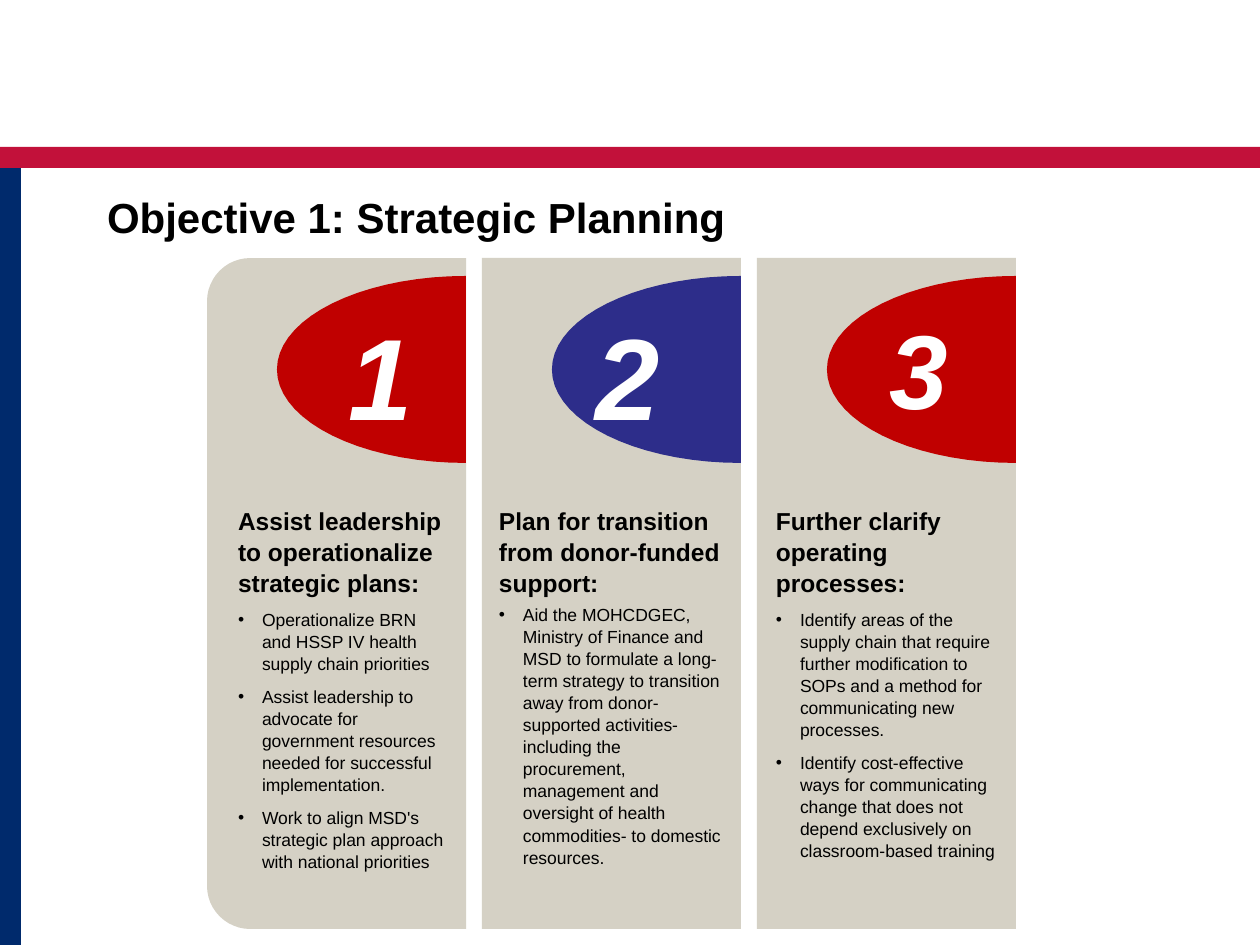
from math import cos, pi, sin

from lxml.etree import SubElement
from pptx import Presentation
from pptx.dml.color import RGBColor
from pptx.enum.shapes import MSO_SHAPE
from pptx.oxml.ns import qn
from pptx.util import Pt

PX = 914400 // 126
FONT = "Arial"
RED, NAVY, BLUE, CRIMSON = "C00000", "002A6C", "2D2D8A", "C2113A"
STONE, BLACK, WHITE = "D5D1C5", "000000", "FFFFFF"

# Content
TITLE = "Objective 1: Strategic Planning"
COLUMNS = [
    dict(number="1", size=66, color=RED, number_box=(349, 298, 107, 129),
         text_box=(238, 505, 208, 353), bullet_gap=3,
         heading="Assist leadership to operationalize strategic plans:",
         bullets=["Operationalize BRN and HSSP IV health supply chain priorities",
                  "Assist leadership to advocate for government resources needed "
                  "for successful implementation.",
                  "Work to align MSD's strategic plan approach with national priorities"]),
    dict(number="2", size=66, color=BLUE, number_box=(596, 298, 136, 129),
         text_box=(499, 505, 228, 353), bullet_gap=0,
         heading="Plan for transition from donor-funded support:",
         bullets=["Aid the MOHCDGEC, Ministry of Finance and MSD to formulate a "
                  "long-term strategy to transition away from donor-supported "
                  "activities- including the procurement, management and oversight "
                  "of health commodities- to domestic resources."]),
    dict(number="3", size=60, color=RED, number_box=(890, 298, 123, 117),
         text_box=(776, 505, 219, 379), bullet_gap=3,
         heading="Further clarify operating processes:",
         bullets=["Identify areas of the supply chain that require further "
                  "modification to SOPs and a method for communicating new processes.",
                  "Identify cost-effective ways for communicating change that does "
                  "not depend exclusively on classroom-based training"]),
]

# Column grid
LEFT, TOP, WIDTH, HEIGHT, PITCH = 207, 258, 259, 671, 275
ARC_TOP, ARC_W, ARC_H, ARC_STEPS = 276, 189, 187, 36
INDENT = 24

prs = Presentation()
prs.slide_width, prs.slide_height = 1260 * PX, 945 * PX
s = prs.slides.add_slide(prs.slide_layouts[6])


def rgb(color):
    return RGBColor.from_string(color)


def paint(sp, color):
    sp.shadow.inherit = False
    sp.fill.solid()
    sp.fill.fore_color.rgb = rgb(color)
    sp.line.fill.background()
    return sp


def add_block(x, y, w, h, color, kind=MSO_SHAPE.RECTANGLE):
    sp = s.shapes.add_shape(kind, x * PX, y * PX, w * PX, h * PX)
    return paint(sp, color)


def add_half_ellipse(right, color):
    mid = ARC_TOP + ARC_H / 2
    angles = [pi * i / ARC_STEPS for i in range(ARC_STEPS + 1)]
    points = [(round((right - ARC_W * sin(a)) * PX),
               round((mid - ARC_H / 2 * cos(a)) * PX)) for a in angles]
    fb = s.shapes.build_freeform(*points[0])
    fb.add_line_segments(points[1:], close=True)
    paint(fb.convert_to_shape(), color)


def add_box(x, y, w, h, wrap=True):
    tf = s.shapes.add_textbox(x * PX, y * PX, w * PX, h * PX).text_frame
    tf.margin_left = tf.margin_top = tf.margin_right = tf.margin_bottom = 0
    tf.word_wrap = wrap
    return tf


def write(tf, text, size=10, color=BLACK, bold=False, italic=False,
          before=0, after=0, spacing=1.05, bullet=False):
    first = not tf.paragraphs[0].runs
    p = tf.paragraphs[0] if first else tf.add_paragraph()
    p.line_spacing = spacing
    p.space_before, p.space_after = Pt(before), Pt(after)
    if bullet:
        pPr = p._p.get_or_add_pPr()
        pPr.set("marL", str(INDENT * PX))
        pPr.set("indent", str(-INDENT * PX))
        SubElement(pPr, qn("a:buFont")).set("typeface", FONT)
        SubElement(pPr, qn("a:buChar")).set("char", "•")
    r = p.add_run()
    r.text = text
    r.font.name, r.font.size = FONT, Pt(size)
    r.font.bold, r.font.italic = bold, italic
    r.font.color.rgb = rgb(color)


# Frame bars and title
add_block(0, 147, 1260, 21, CRIMSON)
add_block(0, 168, 21, 777, NAVY)
write(add_box(107, 189, 1045, 70), TITLE, size=24, bold=True)

# Column panels with half ellipses
for i, col in enumerate(COLUMNS):
    x = LEFT + i * PITCH
    if i == 0:
        # Turned a quarter so that the rounded corners face left
        shift = (HEIGHT - WIDTH) / 2
        panel = add_block(int(x - shift), int(TOP + shift), HEIGHT, WIDTH,
                          STONE, MSO_SHAPE.ROUND_2_SAME_RECTANGLE)
        panel.rotation = 270
    else:
        add_block(x, TOP, WIDTH, HEIGHT, STONE)
    add_half_ellipse(x + WIDTH, col["color"])

# Numbers and column text
for col in COLUMNS:
    write(add_box(*col["number_box"], wrap=False), col["number"],
          size=col["size"], color=WHITE, bold=True, italic=True)
    tf = add_box(*col["text_box"])
    write(tf, col["heading"], size=14, bold=True, after=3)
    for text in col["bullets"]:
        write(tf, text, before=col["bullet_gap"], after=col["bullet_gap"], bullet=True)

prs.save("out.pptx")
